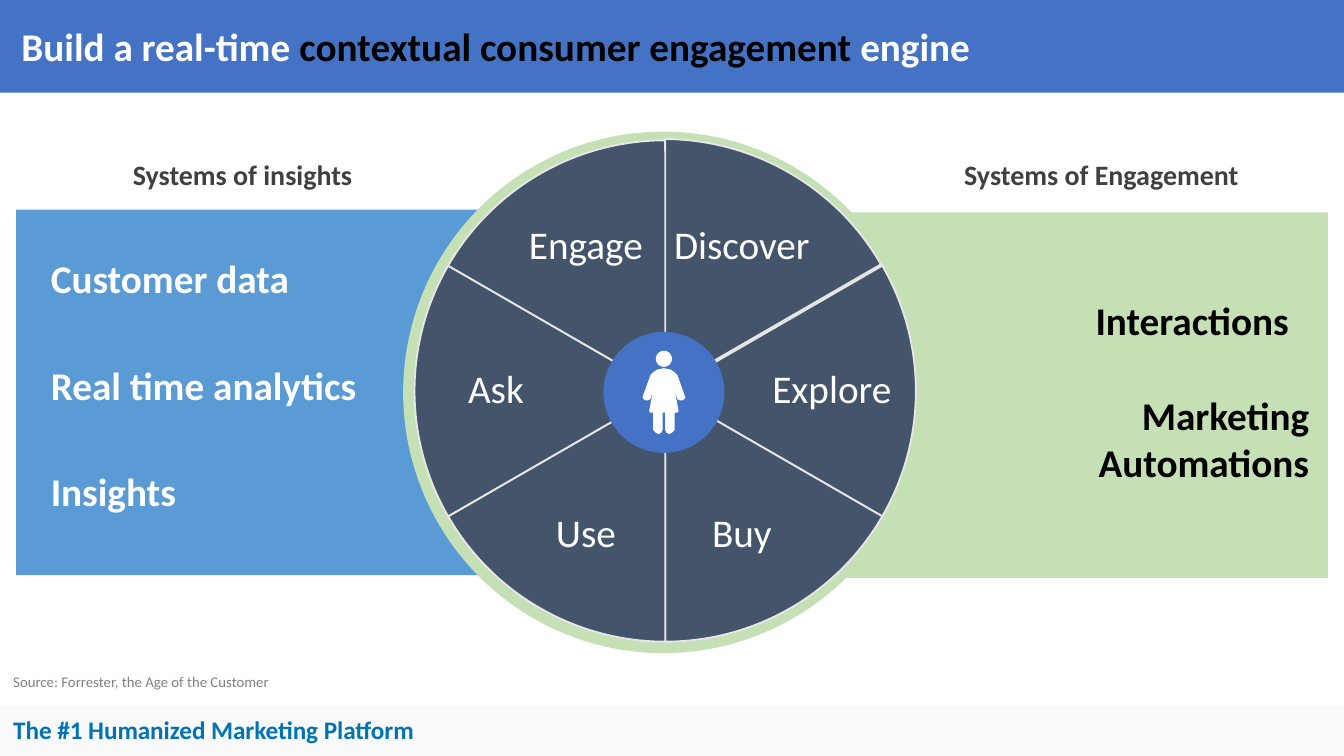
from dataclasses import dataclass
from math import cos, radians, sin

from lxml import etree
from pptx import Presentation
from pptx.dml.color import RGBColor
from pptx.enum.shapes import MSO_SHAPE
from pptx.enum.text import MSO_ANCHOR, MSO_AUTO_SIZE, PP_ALIGN
from pptx.oxml.ns import qn
from pptx.util import Inches, Pt

RECT, OVAL, PIE = MSO_SHAPE.RECTANGLE, MSO_SHAPE.OVAL, MSO_SHAPE.PIE
LEFT, CENTER, RIGHT = PP_ALIGN.LEFT, PP_ALIGN.CENTER, PP_ALIGN.RIGHT
MIDDLE, TOP = MSO_ANCHOR.MIDDLE, MSO_ANCHOR.TOP


@dataclass(frozen=True)
class Theme:
    font: str = "Calibri"
    white: str = "FFFFFF"
    black: str = "000000"
    band: str = "4472C4"
    insight: str = "5B9BD5"
    engagement: str = "C5E0B4"
    slice: str = "44546A"
    slice_line: str = "E7E6E6"
    heading: str = "404040"
    source: str = "808080"
    footer: str = "F8F8F8"
    tagline: str = "0073B5"
    large: float = 21
    medium: float = 15
    small: float = 13.5
    tiny: float = 7.9


THEME = Theme()
WHEEL_X, WHEEL_Y, WHEEL_SIZE = 4.94, 2.9, 3.73
# Stages clockwise from the top, with label offsets from the wheel centre
STAGES = [
    ("Discover", 0.58, -1.07),
    ("Explore", 1.25, 0),
    ("Buy", 0.58, 1.07),
    ("Use", -0.58, 1.07),
    ("Ask", -1.25, 0),
    ("Engage", -0.58, -1.07),
]
# Right half of the body, from neck to crotch: distance from axis, height
HALF_BODY = [
    (0, 2.74), (0.05, 2.75), (0.08, 2.77), (0.1, 2.79), (0.15, 2.93),
    (0.16, 2.96), (0.14, 2.98), (0.12, 2.98), (0.1, 2.97), (0.08, 2.9),
    (0.11, 3.06), (0.1, 3.07), (0.08, 3.07), (0.08, 3.2), (0.06, 3.22),
    (0.04, 3.23), (0.02, 3.22), (0.01, 3.2), (0.01, 3.07),
]


def paint(sp, fill, line=None):
    sp.shadow.inherit = False
    sp.fill.solid()
    sp.fill.fore_color.rgb = RGBColor.from_string(fill)
    if line:
        sp.line.color.rgb = RGBColor.from_string(line)
        sp.line.width = Pt(1)
    else:
        sp.line.fill.background()


def add_shape(shapes, kind, box, fill, line=None):
    sp = shapes.add_shape(kind, *map(Inches, box))
    paint(sp, fill, line)
    return sp


def write(sp, text, size=THEME.large, color=THEME.white, bold=True, align=LEFT,
          anchor=MIDDLE, spacing=None, inset=None):
    """Write text, or a list of (text, colour) runs, into a shape."""
    tf = sp.text_frame
    tf.word_wrap = True
    tf.auto_size = MSO_AUTO_SIZE.NONE
    tf.vertical_anchor = anchor
    if inset is not None:
        tf.margin_left = tf.margin_right = Inches(inset)
        tf.margin_top = tf.margin_bottom = Inches(inset)
    p = tf.paragraphs[0]
    p.alignment = align
    if spacing:
        p.line_spacing = spacing
    runs = [(text, color)] if isinstance(text, str) else text
    for content, run_color in runs:
        r = p.add_run()
        r.text = content
        r.font.name = THEME.font
        r.font.size = Pt(size)
        r.font.bold = bold
        r.font.color.rgb = RGBColor.from_string(run_color)


def add_text(shapes, box, text, **fmt):
    write(shapes.add_textbox(*map(Inches, box)), text, **fmt)


def add_bands(slide):
    footer = add_shape(slide.shapes, RECT, (0, 5.25, 10, 0.37), THEME.footer)
    color = footer.fill._xPr.find(qn("a:solidFill"))[0]
    etree.SubElement(color, qn("a:alpha")).set("val", "68000")
    add_text(slide.shapes, (0, 5.25, 3.31, 0.38),
             "The #1 Humanized Marketing Platform", size=THEME.small,
             color=THEME.tagline, spacing=0.9)
    add_shape(slide.shapes, RECT, (0, 0, 10, 0.69), THEME.band)


def add_title(slide):
    sp = slide.shapes.title
    sp.left, sp.top, sp.width, sp.height = map(Inches, (0.06, 0.15, 9.81, 0.42))
    write(sp, [("Build a real-time ", THEME.white),
               ("contextual consumer engagement ", THEME.black),
               ("engine", THEME.white)], spacing=0.9)
    slide.shapes._spTree.append(sp._element)  # bring in front of the band


def add_wheel(slide):
    shapes = slide.shapes.add_group_shape().shapes
    left, top = WHEEL_X - WHEEL_SIZE / 2, WHEEL_Y - WHEEL_SIZE / 2
    for i, (name, dx, dy) in enumerate(STAGES):
        nudge = 0 if i == 0 else 0.01  # the first slice stands slightly apart
        sp = add_shape(shapes, PIE,
                       (left + nudge, top + nudge, WHEEL_SIZE, WHEEL_SIZE),
                       THEME.slice, THEME.slice_line)
        # Pie angles: 0.6 units per degree, six slices of 60 degrees
        start = (162 + 36 * i) % 216
        sp.adjustments[0] = start
        sp.adjustments[1] = (start + 36) % 216
        add_text(shapes, (WHEEL_X + dx - 0.55, WHEEL_Y + dy - 0.39, 1.1, 0.8),
                 name, bold=False, align=CENTER, spacing=0.9, inset=0.03)


def add_person(slide):
    shapes = slide.shapes.add_group_shape().shapes
    add_shape(shapes, OVAL, (4.49, 2.47, 0.9, 0.9), THEME.band)
    body = [(Inches(WHEEL_X + side * dx), Inches(y))
            for side, half in ((1, HALF_BODY), (-1, HALF_BODY[::-1]))
            for dx, y in half]
    head = [(Inches(WHEEL_X + 0.06 * cos(radians(a))),
             Inches(2.67 + 0.06 * sin(radians(a))))
            for a in range(0, 360, 15)]
    builder = shapes.build_freeform(*body[0])
    builder.add_line_segments(body[1:])
    builder.move_to(*head[0])
    builder.add_line_segments(head[1:])
    paint(builder.convert_to_shape(), THEME.white)


def add_systems(slide):
    shapes = slide.shapes
    for left, text in ((0.38, "Systems of insights"),
                       (6.77, "Systems of Engagement")):
        sp = add_shape(shapes, RECT, (left, 1.17, 2.85, 0.26), THEME.white)
        write(sp, text, size=THEME.medium, color=THEME.heading, align=CENTER)
    insights = ("Customer data", "Real time analytics", "Insights")
    for i, text in enumerate(insights):
        add_text(shapes, (0.28, 1.94 + 0.79 * i, 2.66, 0.26), text)
    for box, text in (((6.93, 2.25, 2.76, 0.26), "Interactions"),
                      ((6.87, 3.13, 2.97, 0.26), "Marketing Automations")):
        add_text(shapes, box, text, color=THEME.black, align=RIGHT)


def main():
    prs = Presentation()
    prs.slide_width, prs.slide_height = Inches(10), Inches(10 * 9 / 16)
    slide = prs.slides.add_slide(prs.slide_layouts[5])
    # Header, footer and side panels around the wheel's rim
    add_bands(slide)
    add_shape(slide.shapes, RECT, (0.12, 1.56, 4.05, 2.72), THEME.insight)
    add_shape(slide.shapes, OVAL, (3, 0.98, 3.87, 3.88), THEME.engagement)
    add_shape(slide.shapes, RECT, (5.83, 1.58, 4.05, 2.72), THEME.engagement)
    add_title(slide)
    # Customer life cycle
    add_wheel(slide)
    add_person(slide)
    # Panel texts and source line
    add_systems(slide)
    add_text(slide.shapes, (0, 4.96, 3.25, 0.23),
             "Source: Forrester, the Age of the Customer", size=THEME.tiny,
             color=THEME.source, bold=False, anchor=TOP)
    prs.save("out.pptx")


if __name__ == "__main__":
    main()
